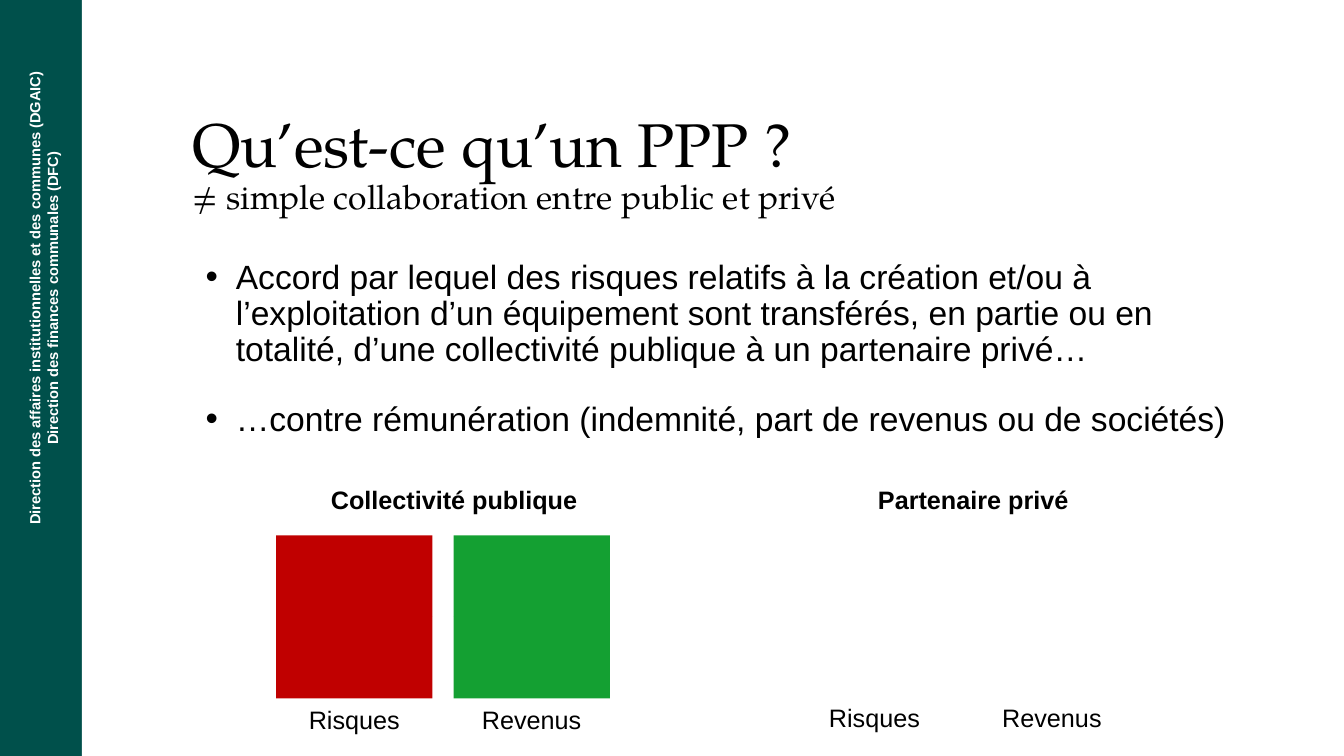
from dataclasses import dataclass, field

from lxml import etree
from pptx import Presentation
from pptx.dml.color import RGBColor
from pptx.enum import shapes, text
from pptx.oxml import ns
from pptx.util import Pt

GREEN_DARK = RGBColor(0x00, 0x50, 0x4B)
WHITE = RGBColor(0xFF, 0xFF, 0xFF)
BLACK = RGBColor(0x00, 0x00, 0x00)
RISK_RED = RGBColor(0xC0, 0x00, 0x00)
REVENUE_GREEN = RGBColor(0x14, 0xA0, 0x32)

SERIF = "TeX Gyre Pagella"
SANS = "Arial"
INSET = 5.76
SIDES = ("left", "top", "right", "bottom")


@dataclass
class Line:
    words: str
    size: float


@dataclass
class Label:
    words: str
    left: float
    top: float
    width: float
    look: dict = field(default_factory=dict)


@dataclass
class Block:
    left: float
    top: float
    width: float
    height: float
    color: RGBColor


def set_all(target, values: dict) -> None:
    for name, value in values.items():
        setattr(target, name, value)


def add_box(page, left: float, top: float, width: float, height: float, **frame_values):
    box = page.shapes.add_textbox(Pt(left), Pt(top), Pt(width), Pt(height))
    set_all(box.text_frame, {"word_wrap": True, **frame_values})
    return box


def add_span(para, words: str, size: float, color: RGBColor = BLACK,
             name: str = SANS, **look) -> None:
    span = para.add_run()
    span.text = words
    set_all(span.font, {"size": Pt(size), "name": name, **look})
    span.font.color.rgb = color


def add_lines(para, lines: list[Line], **look) -> None:
    for index, line in enumerate(lines):
        if index:
            para.add_line_break()
        add_span(para, line.words, line.size, **look)


def add_bullet(para) -> None:
    props = para._p.get_or_add_pPr()
    set_indent = {"marL": Pt(21.6), "indent": -Pt(21.6)}
    for name, value in set_indent.items():
        props.set(name, str(int(value)))
    for tag, name, value in (("a:buSzPct", "val", "105000"),
                             ("a:buFont", "typeface", SANS),
                             ("a:buChar", "char", "•")):
        etree.SubElement(props, ns.qn(tag)).set(name, value)


def add_block(page, block: Block) -> None:
    shape = page.shapes.add_shape(
        shapes.MSO_SHAPE.RECTANGLE, Pt(block.left), Pt(block.top),
        Pt(block.width), Pt(block.height))
    shape.shadow.inherit = False
    shape.fill.solid()
    shape.fill.fore_color.rgb = block.color
    shape.line.fill.background()


def add_label(page, label: Label) -> None:
    box = add_box(page, label.left, label.top, label.width, 29,
                  auto_size=text.MSO_AUTO_SIZE.SHAPE_TO_FIT_TEXT)
    para = box.text_frame.paragraphs[0]
    para.alignment = text.PP_ALIGN.CENTER
    add_span(para, label.words, 18, **label.look)


def build() -> None:
    deck = Presentation()
    set_all(deck, {"slide_width": Pt(960), "slide_height": Pt(540)})
    page = deck.slides.add_slide(deck.slide_layouts[6])
    margins = {f"margin_{side}": Pt(INSET) for side in SIDES}

    # Dark background with a white page, leaving the side band
    page.background.fill.solid()
    page.background.fill.fore_color.rgb = GREEN_DARK
    add_block(page, Block(58.5, 0, 901.5, 540, WHITE))

    # Title and subtitle
    title = add_box(page, 131.8, 75.6, 761.8, 103.7, **margins)
    para = title.text_frame.paragraphs[0]
    para.line_spacing = 0.9
    add_lines(para, [Line("Qu’est-ce qu’un PPP ?", 44),
                     Line("≠ simple collaboration entre public et privé", 24)],
              name=SERIF)

    # Definition
    body = add_box(page, 141.1, 180, 745.2, 306, **margins)
    points = [
        "Accord par lequel des risques relatifs à la création et/ou à "
        "l’exploitation d’un équipement sont transférés, en partie ou en "
        "totalité, d’une collectivité publique à un partenaire privé…",
        "…contre rémunération (indemnité, part de revenus ou de sociétés)",
    ]
    for index, words in enumerate(points):
        frame = body.text_frame
        para = frame.add_paragraph() if index else frame.paragraphs[0]
        add_bullet(para)
        set_all(para, {"line_spacing": 0.9, "space_before": Pt(24 if index else 0)})
        add_span(para, words, 24)

    # Department name up the side band
    side = add_box(page, -149, 198.7, 360, 28.8,
                   vertical_anchor=text.MSO_ANCHOR.MIDDLE)
    side.rotation = 270
    para = side.text_frame.paragraphs[0]
    para.alignment = text.PP_ALIGN.CENTER
    add_lines(para, [
        Line("Direction des affaires institutionnelles et des communes (DGAIC)", 10.5),
        Line("Direction des finances communales (DFC)", 10.5),
    ], color=WHITE, bold=True)

    # Risk and revenue blocks, two halves each
    half = 58.2
    for left, color in ((197.3, RISK_RED), (324, REVENUE_GREEN)):
        for row in range(2):
            add_block(page, Block(left, 382.4 + row * half, 111.6, half, color))

    # Party headings and column labels
    bold = {"bold": True}
    for label in (
        Label("Risques", 197.3, 499.7, 111.6),
        Label("Revenus", 311, 499.7, 137.5),
        Label("Risques", 568.8, 498.2, 111.6),
        Label("Revenus", 682.6, 498.2, 137.5),
        Label("Collectivité publique", 216.7, 342.7, 215.3, bold),
        Label("Partenaire privé", 587.5, 342.7, 215.3, bold),
    ):
        add_label(page, label)

    deck.save("out.pptx")


if __name__ == "__main__":
    build()
